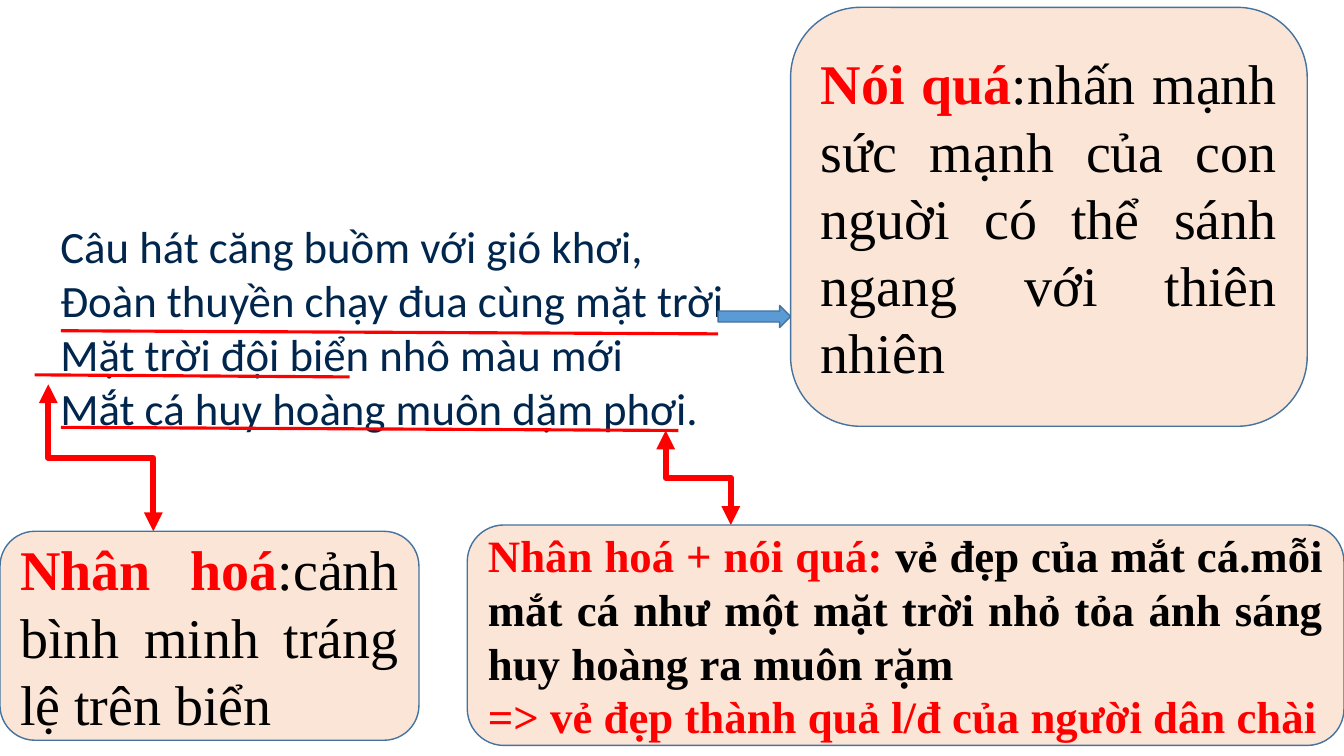
"""Builds a slide that explains the figures of speech in a Vietnamese poem."""
import lxml.etree
import pptx
import pptx.dml.color
import pptx.enum.shapes
import pptx.enum.text
import pptx.oxml.ns
import pptx.util

EMU_PER_PX = 9525
COLOURS = {
    "poem": "00264D",
    "mark": "FF0000",
    "body": "000000",
    "panel": "FBE5D6",
    "arrow": "5B9BD5",
    "border": "43739E",
}
POEM = [
    "Câu hát căng buồm với gió khơi,",
    "Đoàn thuyền chạy đua cùng mặt trời.",
    "Mặt trời đội biển nhô màu mới",
    "Mắt cá huy hoàng muôn dặm phơi.",
]


def px(*lengths):
    return [pptx.util.Emu(length * EMU_PER_PX) for length in lengths]


def rgb(name):
    return pptx.dml.color.RGBColor.from_string(COLOURS[name])


def style_run(run, font, size, colour, bold=False):
    run.font.name = font
    run.font.size = pptx.util.Pt(size)
    run.font.bold = bold
    run.font.color.rgb = rgb(colour)


def add_poem(page, place):
    box = page.shapes.add_textbox(*px(*place))
    box.text_frame.word_wrap = True
    box.text_frame.text = "\v".join(POEM)
    for run in box.text_frame.paragraphs[0].runs:
        style_run(run, "Calibri", 32, "poem")


def add_block(page, kind, place, fill):
    block = page.shapes.add_shape(kind, *px(*place))
    block.shadow.inherit = False
    block.fill.solid()
    block.fill.fore_color.rgb = rgb(fill)
    block.line.color.rgb = rgb("border")
    block.line.width = pptx.util.Pt(1)
    return block


def add_panel(page, place, size, paragraphs):
    panel = add_block(page, pptx.enum.shapes.MSO_SHAPE.ROUNDED_RECTANGLE, place, "panel")
    frame = panel.text_frame
    frame.word_wrap = True
    frame.vertical_anchor = pptx.enum.text.MSO_ANCHOR.MIDDLE
    for index, spans in enumerate(paragraphs):
        para = frame.add_paragraph() if index else frame.paragraphs[0]
        para.alignment = pptx.enum.text.PP_ALIGN.JUSTIFY
        for text, colour, bold in spans:
            span = para.add_run()
            span.text = text
            style_run(span, "Times New Roman", size, colour, bold)


def add_red_line(page, kind, ends, width):
    line = page.shapes.add_connector(kind, *px(*ends))
    line.line.color.rgb = rgb("mark")
    line.line.width = pptx.util.Pt(width)
    properties = line._element.spPr
    lxml.etree.SubElement(properties, pptx.oxml.ns.qn("a:effectLst"))
    return line


def add_underline(page, ends):
    add_red_line(page, pptx.enum.shapes.MSO_CONNECTOR.STRAIGHT, ends, 2.25)


def add_bent_arrow(page, left, top, right, bottom):
    middle_x, middle_y = (left + right) / 2, (top + bottom) / 2
    half_run, half_drop = (right - left) / 2, (bottom - top) / 2
    ends = [round(end) for end in (middle_x + half_drop, middle_y - half_run,
                                   middle_x - half_drop, middle_y + half_run)]
    arrow = add_red_line(page, pptx.enum.shapes.MSO_CONNECTOR.ELBOW, ends, 4.5)
    arrow._element.spPr.find(pptx.oxml.ns.qn("a:xfrm")).set("rot", str(270 * 60000))
    outline = arrow.line._get_or_add_ln()
    for tip in ("a:headEnd", "a:tailEnd"):
        lxml.etree.SubElement(outline, pptx.oxml.ns.qn(tip), type="triangle")


def main():
    deck = pptx.Presentation()
    deck.slide_width, deck.slide_height = px(1280, 720)
    page = deck.slides.add_slide(deck.slide_layouts[6])

    add_poem(page, (48, 204, 693, 217))
    add_underline(page, (33, 357, 333, 359))
    add_underline(page, (58, 315, 684, 318))
    add_block(page, pptx.enum.shapes.MSO_SHAPE.RIGHT_ARROW, (684, 291, 69, 21), "arrow")
    add_panel(page, (753, 7, 492, 399), 40, [[
        ("Nói quá", "mark", True),
        (":nhấn mạnh sức mạnh của con nguời có thể sánh ngang với thiên nhiên", "body", False),
    ]])
    add_bent_arrow(page, 46, 366, 147, 506)
    add_panel(page, (0, 506, 399, 199), 40, [[
        ("Nhân hoá", "mark", True),
        (":cảnh bình minh tráng lệ trên biển", "body", False),
    ]])
    add_underline(page, (58, 407, 646, 410))
    add_bent_arrow(page, 634, 410, 697, 500)
    add_panel(page, (445, 500, 835, 210), 32, [
        [
            ("Nhân hoá + nói quá: ", "mark", True),
            ("vẻ đẹp của mắt cá.mỗi mắt cá như một mặt trời nhỏ tỏa ánh sáng "
             "huy hoàng ra muôn rặm", "body", True),
        ],
        [("=> vẻ đẹp thành quả l/đ của người dân chài", "mark", True)],
    ])
    deck.save("out.pptx")


if __name__ == "__main__":
    main()
